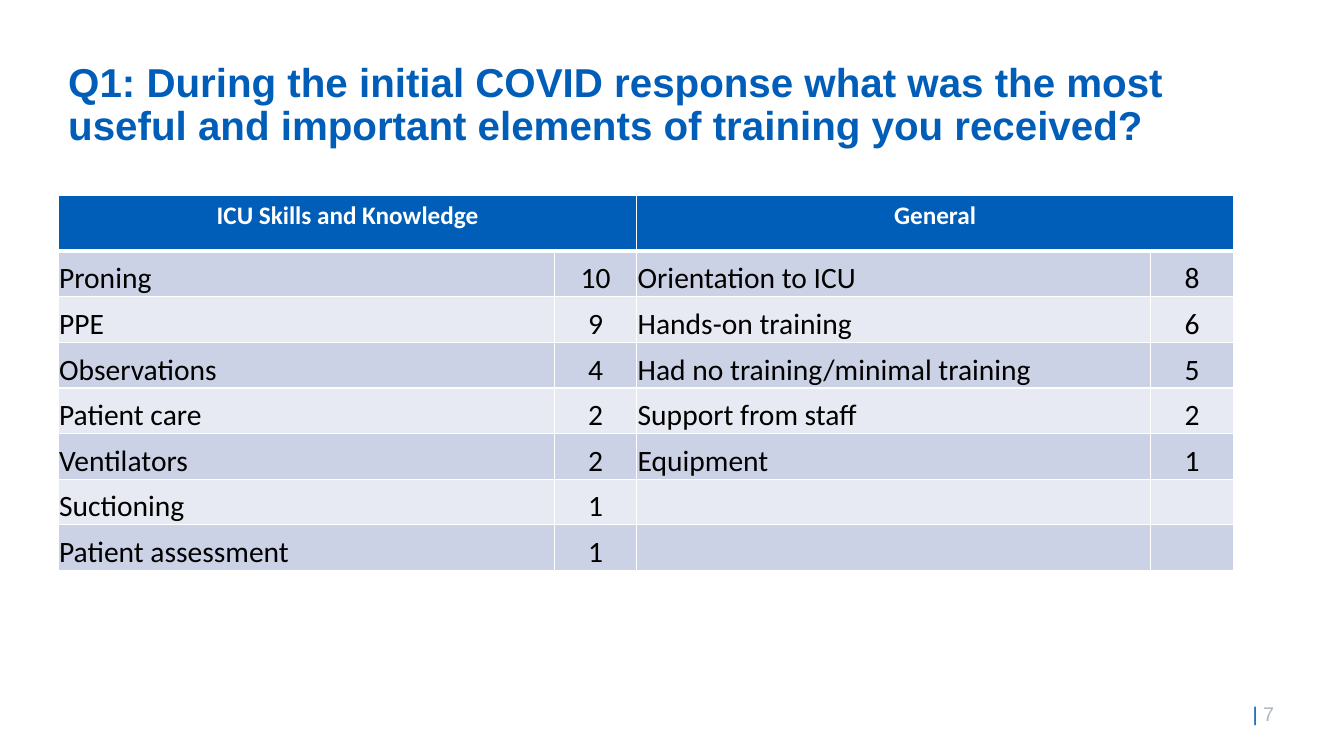
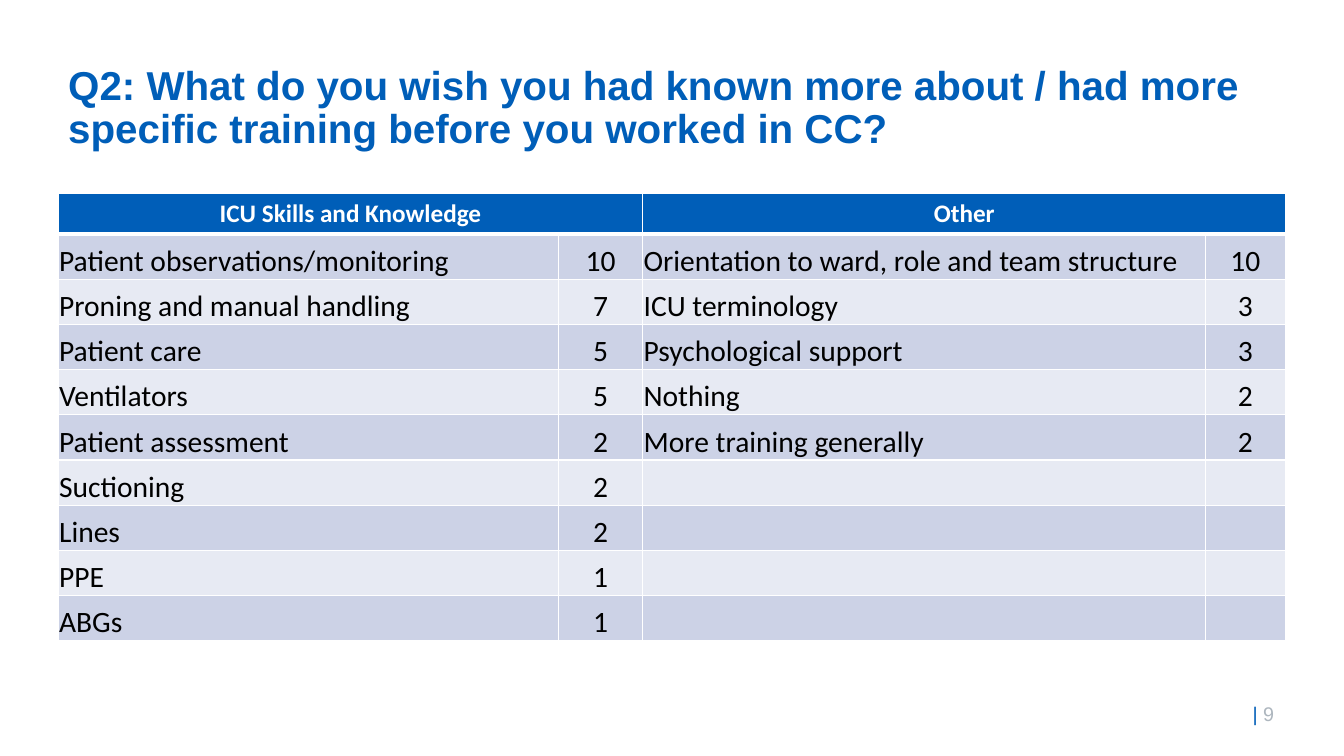
from itertools import zip_longest

from pptx import Presentation
from pptx.dml.color import RGBColor
from pptx.enum.text import MSO_ANCHOR, PP_ALIGN
from pptx.oxml import parse_xml
from pptx.oxml.ns import nsdecls
from pptx.util import Cm, Pt


def color(value):
    return RGBColor.from_string(value)


class SurveyDeck:
    BLUE = "005EB8"
    GREY = "ADB6BE"
    WHITE = "FFFFFF"
    BLACK = "000000"
    BANDS = ("CCD2E6", "E7EAF3")
    TITLE_FONT = "Arial"
    TABLE_FONT = "Calibri"
    LEFT = 1.47

    def __init__(self):
        self.presentation = Presentation()
        self.presentation.slide_width = Cm(33.87)
        self.presentation.slide_height = Cm(19.05)
        self.slide = None

    def add_slide(self, number):
        self.slide = self.presentation.slides.add_slide(self.presentation.slide_layouts[6])
        paragraph = self.add_text_box(31.32, 17.55, 2.39, 0.86)
        self.add_run(paragraph, "| ", self.TITLE_FONT, 14.1, self.BLUE)
        self.add_run(paragraph, str(number), self.TITLE_FONT, 14.1, self.GREY)

    def add_text_box(self, left, top, width, height):
        shape = self.slide.shapes.add_textbox(Cm(left), Cm(top), Cm(width), Cm(height))
        shape.text_frame.word_wrap = True
        return shape.text_frame.paragraphs[0]

    def add_run(self, paragraph, text, font_name, size, font_color, bold=False):
        run = paragraph.add_run()
        run.text = text
        run.font.name = font_name
        run.font.size = Pt(size)
        run.font.bold = bold
        run.font.color.rgb = color(font_color)

    def add_title(self, text, top):
        paragraph = self.add_text_box(self.LEFT, top, 30.93, 3)
        paragraph.line_spacing = 0.9
        self.add_run(paragraph, text, self.TITLE_FONT, 28.8, self.BLUE, bold=True)

    def style_cell(self, cell, fill, top_width=1, bottom_width=1):
        properties = cell._tc.get_or_add_tcPr()
        widths = {"lnL": 1, "lnR": 1, "lnT": top_width, "lnB": bottom_width}
        for side, width in widths.items():
            properties.append(parse_xml(
                f'<a:{side} {nsdecls("a")} w="{Pt(width)}"><a:solidFill>'
                f'<a:srgbClr val="{self.WHITE}"/></a:solidFill></a:{side}>'
            ))
        cell.fill.solid()
        cell.fill.fore_color.rgb = color(fill)

    def fill_header(self, table, headings):
        for column in range(4):
            self.style_cell(table.cell(0, column), self.BLUE, bottom_width=3)
        for index, heading in enumerate(headings):
            cell = table.cell(0, index * 2)
            cell.merge(table.cell(0, index * 2 + 1))
            paragraph = cell.text_frame.paragraphs[0]
            paragraph.alignment = PP_ALIGN.CENTER
            self.add_run(paragraph, heading, self.TABLE_FONT, 18, self.WHITE, bold=True)

    def fill_body_cell(self, cell, value):
        cell.vertical_anchor = MSO_ANCHOR.BOTTOM
        cell.margin_left = cell.margin_right = cell.margin_top = Cm(0.02)
        cell.margin_bottom = 0
        paragraph = cell.text_frame.paragraphs[0]
        paragraph.alignment = PP_ALIGN.CENTER if isinstance(value, int) else PP_ALIGN.LEFT
        self.add_run(paragraph, str(value), self.TABLE_FONT, 21.1, self.BLACK)

    def add_answer_table(self, top, column_widths, header_height, row_height, groups):
        answers = list(zip_longest(*groups.values(), fillvalue=(None, None)))
        height = header_height + row_height * len(answers)
        table = self.slide.shapes.add_table(
            len(answers) + 1, 4, Cm(self.LEFT), Cm(top), Cm(sum(column_widths)), Cm(height)
        ).table
        table.horz_banding = False
        for column, width in zip(table.columns, column_widths):
            column.width = Cm(width)
        for index, row in enumerate(table.rows):
            row.height = Cm(row_height if index else header_height)
        self.fill_header(table, groups)
        for row, (left, right) in enumerate(answers, start=1):
            for column, value in enumerate(left + right):
                cell = table.cell(row, column)
                self.style_cell(cell, self.BANDS[(row - 1) % 2], top_width=3 if row == 1 else 1)
                if value is not None:
                    self.fill_body_cell(cell, value)


def main():
    deck = SurveyDeck()

    deck.add_slide(7)
    deck.add_title(
        "Q1: During the initial COVID response what was the most useful "
        "and important elements of training you received?",
        top=1.45,
    )
    deck.add_answer_table(4.93, (12.5, 2.08, 12.95, 2.08), 1.4, 1.15, {
        "ICU Skills and Knowledge": [
            ("Proning", 10),
            ("PPE", 9),
            ("Observations", 4),
            ("Patient care", 2),
            ("Ventilators", 2),
            ("Suctioning", 1),
            ("Patient assessment", 1),
        ],
        "General": [
            ("Orientation to ICU", 8),
            ("Hands-on training", 6),
            ("Had no training/minimal training", 5),
            ("Support from staff", 2),
            ("Equipment", 1),
        ],
    })

    deck.add_slide(9)
    deck.add_title(
        "Q2: What do you wish you had known more about / had more "
        "specific training before you worked in CC?",
        top=1.52,
    )
    deck.add_answer_table(4.88, (12.6, 2.13, 14.17, 2.03), 0.97, 1.14, {
        "ICU Skills and Knowledge": [
            ("Patient observations/monitoring", 10),
            ("Proning and manual handling", 7),
            ("Patient care", 5),
            ("Ventilators", 5),
            ("Patient assessment", 2),
            ("Suctioning", 2),
            ("Lines", 2),
            ("PPE", 1),
            ("ABGs", 1),
        ],
        "Other": [
            ("Orientation to ward, role and team structure", 10),
            ("ICU terminology", 3),
            ("Psychological support", 3),
            ("Nothing", 2),
            ("More training generally", 2),
        ],
    })

    deck.presentation.save("out.pptx")


if __name__ == "__main__":
    main()
